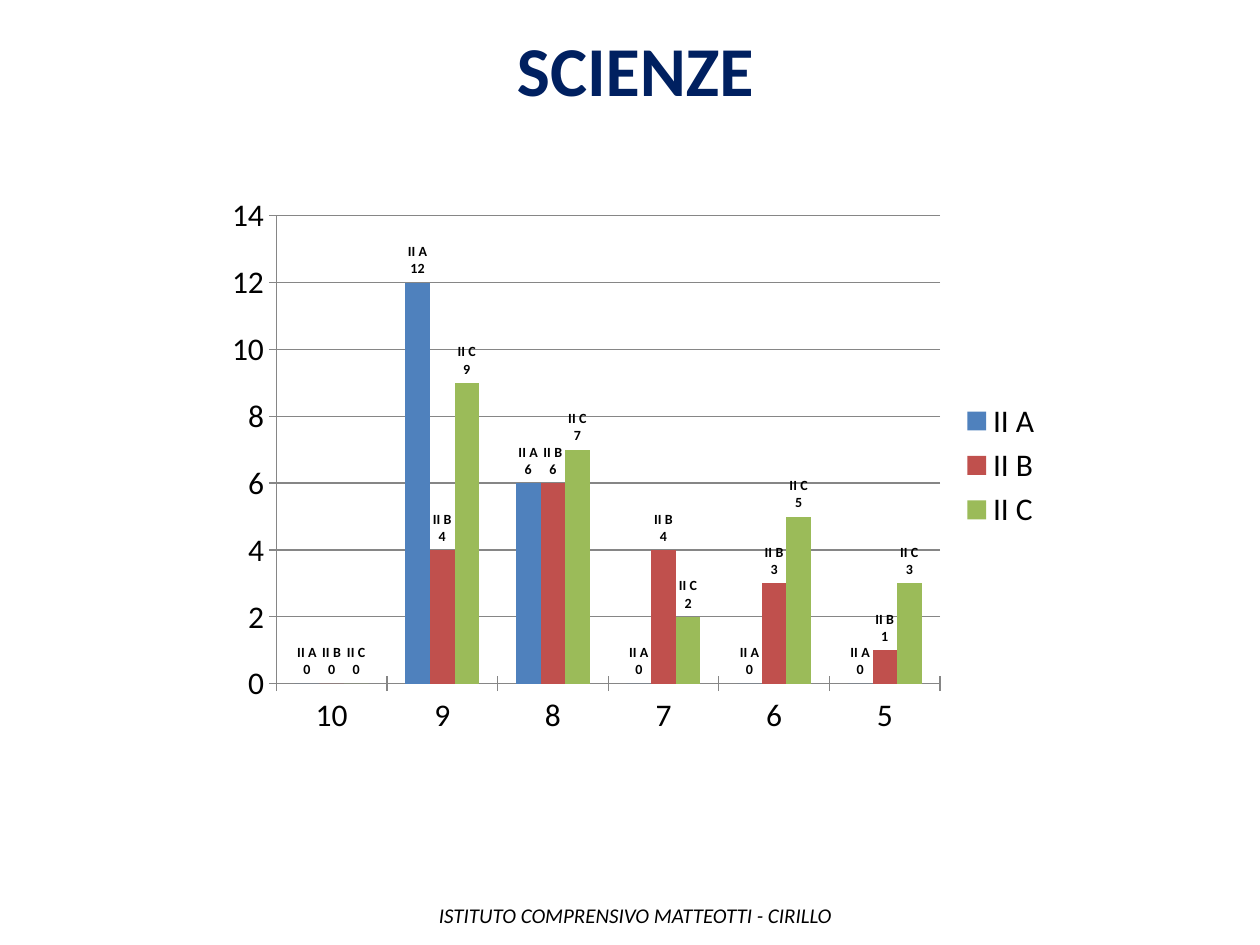
"""Build the SCIENZE slide with its chart of marks by class."""
from lxml import etree
from pptx import Presentation
from pptx.chart.data import CategoryChartData
from pptx.dml.color import RGBColor
from pptx.enum import chart as ch, text as tx
from pptx.oxml.ns import qn
from pptx.util import Pt

NAVY = RGBColor(0x00, 0x20, 0x60)
BLACK = RGBColor(0x00, 0x00, 0x00)
GREY = RGBColor(0x86, 0x86, 0x86)
BLUE = RGBColor(0x4F, 0x81, 0xBD)
RED = RGBColor(0xC0, 0x50, 0x4D)
GREEN = RGBColor(0x9B, 0xBB, 0x59)
FACE = "Calibri"


def write(shape, words, size, color=BLACK, bold=False, italic=False,
          align=tx.PP_ALIGN.LEFT, wrap=True):
    frame = shape.text_frame
    frame.text = words
    frame.word_wrap = wrap
    frame.auto_size = tx.MSO_AUTO_SIZE.SHAPE_TO_FIT_TEXT
    frame.vertical_anchor = tx.MSO_ANCHOR.TOP
    para = frame.paragraphs[0]
    para.alignment = align
    font = para.runs[0].font
    font.name, font.size = FACE, Pt(size)
    font.bold, font.italic = bold, italic
    font.color.rgb = color


deck = Presentation()
deck.slide_width, deck.slide_height = Pt(720), Pt(540)
slide = deck.slides.add_slide(deck.slide_layouts[5])

title = slide.shapes.title
title.left, title.top, title.width, title.height = Pt(99.5), Pt(11.5), Pt(527), Pt(55.5)
write(title, "SCIENZE", size=40, color=NAVY, bold=True, align=tx.PP_ALIGN.CENTER)

foot = slide.shapes.add_textbox(Pt(241), Pt(512), Pt(248.5), Pt(21.6))
write(foot, " ISTITUTO COMPRENSIVO MATTEOTTI - CIRILLO", size=12, italic=True, wrap=False)

marks = {
    "II A": (BLUE, [0, 12, 6, 0, 0, 0]),
    "II B": (RED, [0, 4, 6, 4, 3, 1]),
    "II C": (GREEN, [0, 9, 7, 2, 5, 3]),
}
data = CategoryChartData()
data.categories = ["10", "9", "8", "7", "6", "5"]
for name, (color, counts) in marks.items():
    data.add_series(name, counts)

chart = slide.shapes.add_chart(
    ch.XL_CHART_TYPE.COLUMN_CLUSTERED, Pt(123), Pt(106), Pt(480), Pt(320), data).chart
chart.has_title = False
chart.font.name, chart.font.size = FACE, Pt(18)
chart.font.color.rgb = BLACK
chart.has_legend = True
chart.legend.position = ch.XL_LEGEND_POSITION.RIGHT
chart.legend.include_in_layout = False

chart.value_axis.has_major_gridlines = True
chart.value_axis.minimum_scale, chart.value_axis.maximum_scale = 0, 14
chart.value_axis.major_unit = 2
for axis in (chart.category_axis, chart.value_axis):
    axis.major_tick_mark = ch.XL_TICK_MARK.CROSS
for part in (chart.category_axis, chart.value_axis, chart.value_axis.major_gridlines):
    part.format.line.color.rgb = GREY
    part.format.line.width = Pt(0.75)

plot = chart.plots[0]
plot.gap_width, plot.overlap, plot.vary_by_categories = 150, 0, False
for bars in plot.series:
    bars.format.fill.solid()
    bars.format.fill.fore_color.rgb = marks[bars.name][0]
    tags = bars.data_labels
    tags.show_value = tags.show_series_name = True
    tags.position = ch.XL_LABEL_POSITION.OUTSIDE_END
    tags.font.name, tags.font.size, tags.font.bold = FACE, Pt(8), True
    tags.font.color.rgb = BLACK
    split = etree.Element(qn("c:separator"))
    split.text = "\n"
    bars.format.fill
    bars.data_labels._element.find(qn("c:showBubbleSize")).addnext(split)

deck.save("out.pptx")
